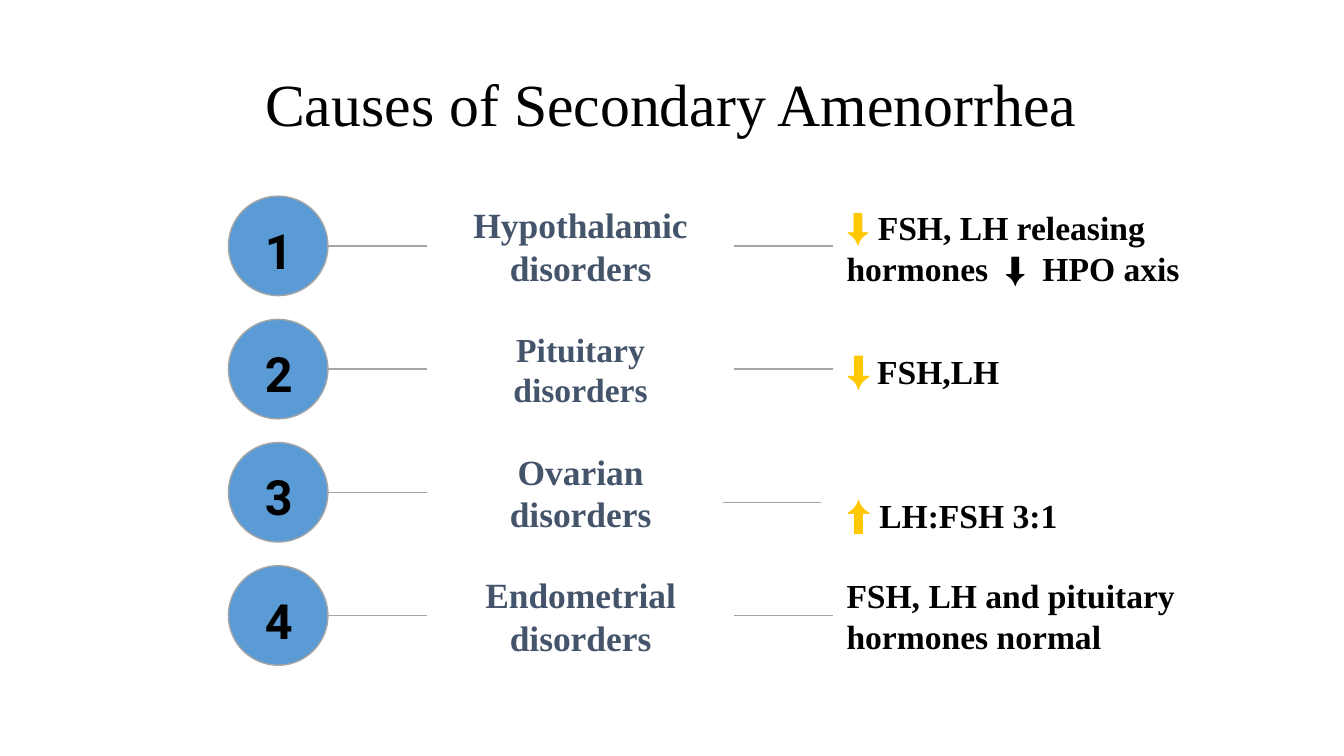
from lxml import etree
from pptx import Presentation
from pptx.dml.color import RGBColor
from pptx.enum.shapes import MSO_CONNECTOR as Connector, MSO_SHAPE as Shape
from pptx.enum.text import MSO_ANCHOR as Anchor, PP_ALIGN as Align
from pptx.oxml.ns import qn
from pptx.util import Inches, Pt

BLACK = RGBColor(0x00, 0x00, 0x00)
BLUE = RGBColor(0x5B, 0x9B, 0xD5)
GRAY = RGBColor(0xA5, 0xA5, 0xA5)
SLATE = RGBColor(0x44, 0x54, 0x6A)
YELLOW = RGBColor(0xFF, 0xC8, 0x00)
SERIF = "Times New Roman"

# Row grid: four rows, evenly spread between the first and last centres
FIRST_CENTER, LAST_CENTER = 1.83, 4.58
CIRCLE_LEFT, CIRCLE_SIZE = 1.7, 0.74
NAME_LEFT, NAME_WIDTH = 3.18, 2.28
DETAIL_LEFT, DETAIL_WIDTH = 6.2, 3.22

# Disorder, its text size and box height; arrow parts with sizes; hormone effect
CAUSES = [
    ("Hypothalamic\ndisorders", 19, 0.55, [("⬇ ", 20)],
     "FSH, LH releasing hormones  ⬇  HPO axis"),
    ("Pituitary\ndisorders", 18, 0.38, [("⬇", 21), (" ", 16)], "FSH,LH"),
    ("Ovarian\ndisorders", 19, 0.72, [("⬆ ", 21)], "LH:FSH 3:1"),
    ("Endometrial disorders", 19, 0.38, [],
     "FSH, LH and pituitary hormones normal"),
]
ROW_PITCH = (LAST_CENTER - FIRST_CENTER) / (len(CAUSES) - 1)


def add_run(paragraph, text, size, font=SERIF, color=BLACK, bold=True):
    run = paragraph.add_run()
    run.text = text
    run.font.name = font
    run.font.size = Pt(size)
    run.font.bold = bold
    run.font.color.rgb = color


def add_text(slide, text, left, center, width, height, *, align=Align.CENTER,
             line_spacing=None, arrow_parts=(), **text_format):
    """Add a text box centred on a height, with an optional leading arrow."""
    box = slide.shapes.add_textbox(Inches(left), Inches(center - height / 2),
                                   Inches(width), Inches(height))
    frame = box.text_frame
    frame.word_wrap = True
    frame.vertical_anchor = Anchor.MIDDLE
    frame.margin_left = frame.margin_right = Inches(0.1)
    frame.margin_top = frame.margin_bottom = Inches(0.1)
    paragraph = frame.paragraphs[0]
    paragraph.alignment = align
    paragraph.line_spacing = line_spacing
    for part, part_size in arrow_parts:
        add_run(paragraph, part, part_size, font="Calibri", color=YELLOW)
    for number, line in enumerate(text.split("\n")):
        if number:
            paragraph.add_line_break()
        add_run(paragraph, line, **text_format)
    return box


def add_circle(slide, center):
    circle = slide.shapes.add_shape(
        Shape.OVAL, Inches(CIRCLE_LEFT), Inches(center - CIRCLE_SIZE / 2),
        Inches(CIRCLE_SIZE), Inches(CIRCLE_SIZE))
    circle.shadow.inherit = False
    circle.fill.solid()
    circle.fill.fore_color.rgb = BLUE
    circle.line.color.rgb = GRAY
    circle.line.width = Pt(0.75)


def add_line(slide, left, right, y, begin=None, end=None):
    """Add a line, joined to the right of begin and the left of end."""
    line = slide.shapes.add_connector(
        Connector.STRAIGHT, Inches(left), Inches(y), Inches(right), Inches(y))
    line.line.color.rgb = GRAY
    line.line.width = Pt(0.75)
    etree.SubElement(line._element.spPr, qn("a:effectLst"))
    if begin is not None:
        line.begin_connect(begin, 3)
    if end is not None:
        line.end_connect(end, 1)


def add_cause(slide, index, cause):
    name, name_size, name_height, arrow_parts, effect = cause
    center = FIRST_CENTER + index * ROW_PITCH
    is_ovarian = index == 2  # its effect sits lower, beside a loose line

    # Numbered circle
    add_circle(slide, center)
    add_text(slide, str(index + 1), 1.76, center + 0.03, 0.63, 0.38,
             size=26, font="Roboto")

    # Disorder and hormone effect
    name_box = add_text(slide, name, NAME_LEFT, center, NAME_WIDTH,
                        name_height, size=name_size, color=SLATE)
    effect_box = add_text(
        slide, effect, DETAIL_LEFT, center + (0.15 if is_ovarian else 0),
        DETAIL_WIDTH, 0.8 if is_ovarian else 0.51, align=Align.LEFT,
        arrow_parts=arrow_parts, size=18)

    # Connecting lines
    add_line(slide, CIRCLE_LEFT + CIRCLE_SIZE, NAME_LEFT, center, end=name_box)
    if is_ovarian:
        add_line(slide, 5.38, 6.11, 3.74)
    else:
        add_line(slide, NAME_LEFT + NAME_WIDTH, DETAIL_LEFT, center,
                 begin=name_box, end=effect_box)


def main():
    presentation = Presentation()
    presentation.slide_width = Inches(10)
    presentation.slide_height = Inches(10 * 9 / 16)
    slide = presentation.slides.add_slide(presentation.slide_layouts[6])

    # Title
    add_text(slide, "Causes of Secondary Amenorrhea", 0.78, 0.8, 8.43, 0.63,
             line_spacing=0.9, size=32, bold=False)

    # Numbered causes
    for index, cause in enumerate(CAUSES):
        add_cause(slide, index, cause)

    presentation.save("out.pptx")


if __name__ == "__main__":
    main()
